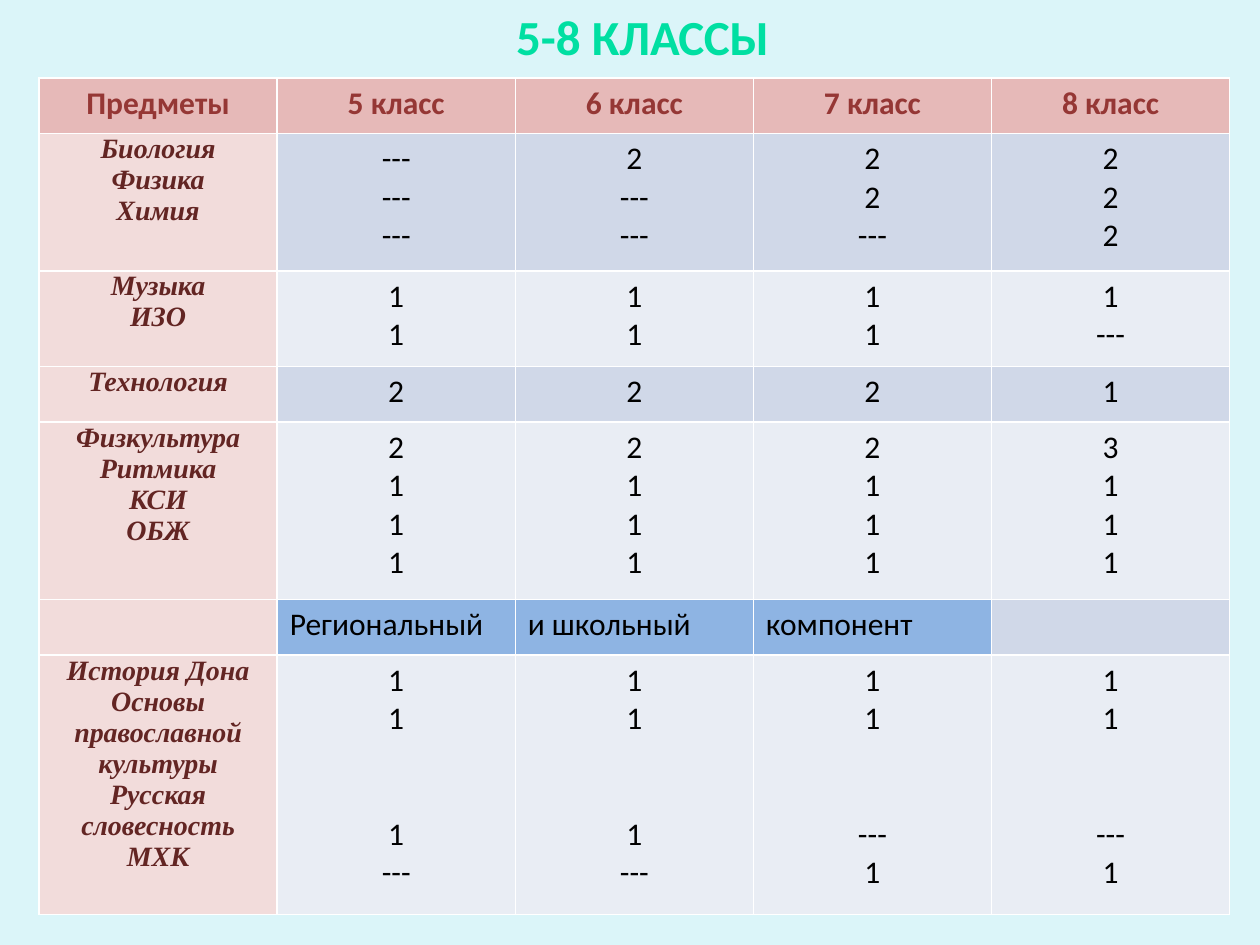
import pptx
import pptx.util
import pptx.dml.color
import pptx.enum.text

Inches = pptx.util.Inches
Pt = pptx.util.Pt
RGBColor = pptx.dml.color.RGBColor
ALIGN = pptx.enum.text.PP_ALIGN

SKY = RGBColor(0xDB, 0xF5, 0xF9)
MINT = RGBColor(0x00, 0xDF, 0xA2)
ROSE = RGBColor(0xE6, 0xB9, 0xB8)
BRICK = RGBColor(0x95, 0x37, 0x35)
PINK = RGBColor(0xF2, 0xDC, 0xDB)
WINE = RGBColor(0x63, 0x25, 0x23)
BLUE = RGBColor(0x8E, 0xB4, 0xE3)
DARK = RGBColor(0xD0, 0xD8, 0xE8)
PALE = RGBColor(0xE9, 0xED, 0xF4)
BLACK = RGBColor(0, 0, 0)


def write(frame, text, size=18, font="Calibri", color=BLACK, bold=False,
          italic=False, align=ALIGN.CENTER, gap=None):
    for i, line in enumerate(text.split("|")):
        para = frame.paragraphs[0] if i == 0 else frame.add_paragraph()
        para.alignment = align
        if i == gap:
            para.space_before = Pt(44)
        run = para.add_run()
        run.text = line
        run.font.size = Pt(size)
        run.font.name = font
        run.font.bold = bold
        run.font.italic = italic
        run.font.color.rgb = color


ROWS = [
    (0.44, ["Предметы", "5 класс", "6 класс", "7 класс", "8 класс"]),
    (1.09, ["Биология|Физика|Химия", "---|---|---", "2|---|---", "2|2|---", "2|2|2"]),
    (0.76, ["Музыка|ИЗО", "1|1", "1|1", "1|1", "1|---"]),
    (0.44, ["Технология", "2", "2", "2", "1"]),
    (1.41, ["Физкультура|Ритмика|КСИ|ОБЖ", "2|1|1|1", "2|1|1|1", "2|1|1|1", "3|1|1|1"]),
    (0.44, ["", "Региональный", "и школьный", "компонент", ""]),
    (2.06, ["История Дона|Основы православной культуры|Русская словесность|МХК",
            "1|1|1|---", "1|1|1|---", "1|1|---|1", "1|1|---|1"]),
]
BANNER = 5
LAST = len(ROWS) - 1
COLS = 5
WIDE = 1.89

deck = pptx.Presentation()
deck.slide_width = Inches(10)
deck.slide_height = Inches(7.5)
slide = deck.slides.add_slide(deck.slide_layouts[6])
slide.background.fill.solid()
slide.background.fill.fore_color.rgb = SKY

high = sum(row[0] for row in ROWS)
table = slide.shapes.add_table(len(ROWS), COLS, Inches(0.31), Inches(0.62),
                               Inches(COLS * WIDE), Inches(high)).table
for col in table.columns:
    col.width = Inches(WIDE)

for r, (tall, texts) in enumerate(ROWS):
    table.rows[r].height = Inches(tall)
    for c, text in enumerate(texts):
        cell = table.cell(r, c)
        fill = DARK if r % 2 else PALE
        style = {}
        if r == 0:
            fill = ROSE
            style = dict(color=BRICK, bold=True)
        elif c == 0:
            fill = PINK
            style = dict(size=16, font="Times New Roman", color=WINE,
                         bold=True, italic=True)
            if text:
                cell.margin_left = cell.margin_right = Inches(0.07)
                cell.margin_top = cell.margin_bottom = 0
        elif r == BANNER and text:
            fill = BLUE
            style = dict(align=ALIGN.LEFT)
        elif r == LAST:
            style = dict(gap=2)
        cell.fill.solid()
        cell.fill.fore_color.rgb = fill
        if text:
            write(cell.text_frame, text, **style)

title = slide.shapes.add_textbox(Inches(3.98), 0, Inches(2.24), Inches(0.57))
title.text_frame.word_wrap = False
write(title.text_frame, "5-8 КЛАССЫ", size=28, color=MINT, bold=True)

deck.save("out.pptx")
